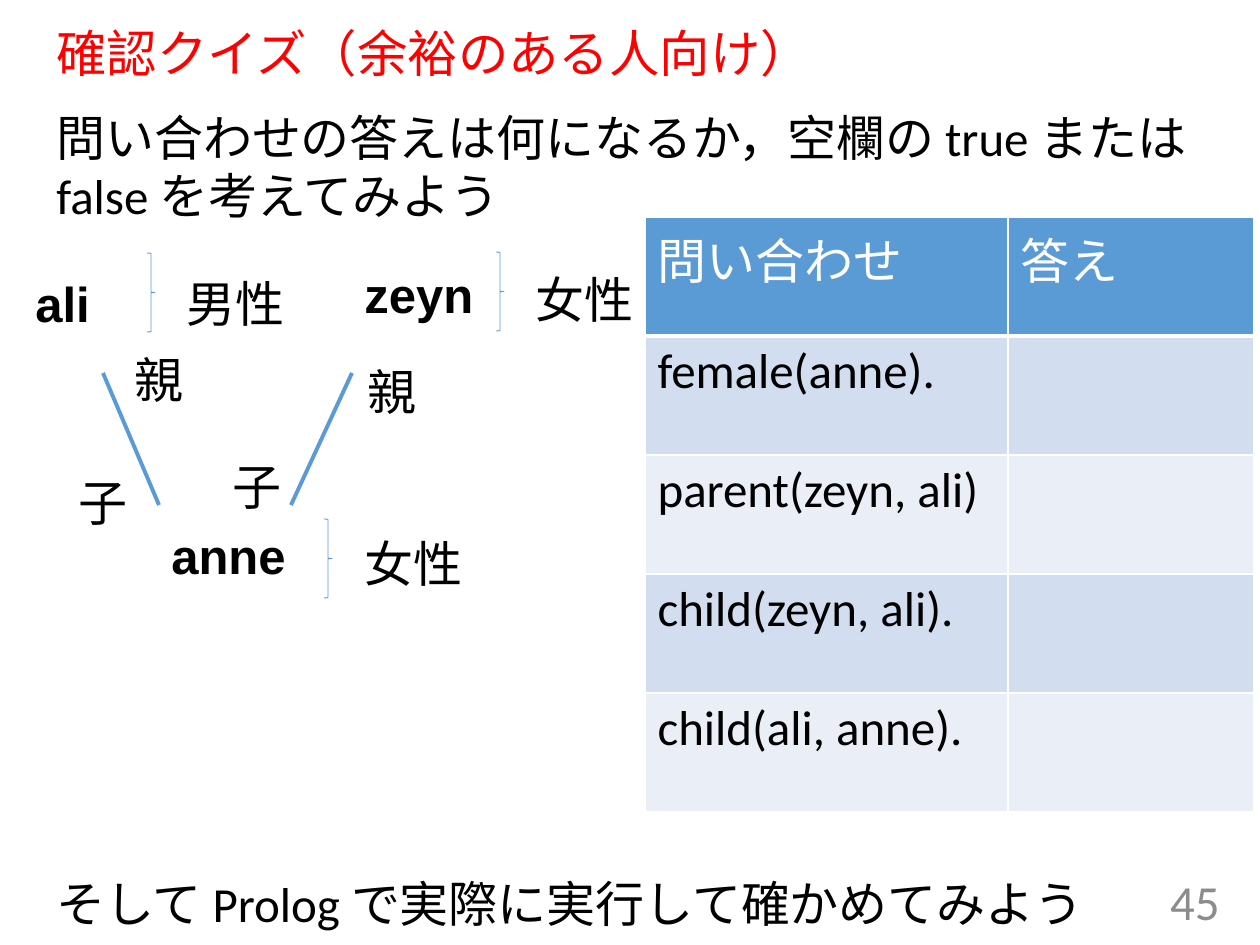
import pptx
import pptx.util
import pptx.dml.color
import pptx.enum.shapes
import pptx.enum.text
import pptx.oxml.ns
from dataclasses import dataclass
from lxml import etree


@dataclass(frozen=True)
class Theme:
    red: str = "FF0000"
    black: str = "000000"
    white: str = "FFFFFF"
    gray: str = "8C8C8C"
    blue: str = "5B9BD5"
    bands: tuple = ("D2DEEF", "EAEFF7")
    title: float = 28.8
    size: float = 28
    head: str = "Lato"
    body: str = "Calibri"
    label: str = "Arial"


theme = Theme()
ALIGN = pptx.enum.text.PP_ALIGN
ANCHOR = pptx.enum.text.MSO_ANCHOR
SHAPE = pptx.enum.shapes.MSO_SHAPE
LINE = pptx.enum.shapes.MSO_CONNECTOR

# Content: boxes are left, top, width, height in px
TITLE = ("確認クイズ（余裕のある人向け）", (44, 24, 1166, 64))
BODY = [
    ("問い合わせの答えは何になるか，空欄の true または false を考えてみよう", (44, 101, 1159, 130)),
    ("そして Prolog で実際に実行して確かめてみよう", (44, 867, 1159, 72)),
]
PAGE = ("45", (949, 876, 283, 50))
NAMES = [
    ("anne", (159, 519, 154, 115)),
    ("ali", (23, 267, 106, 115)),
    ("zeyn", (352, 258, 137, 115)),
]
LABELS = [
    ("男性", (174, 267, 137, 64)),
    ("女性", (523, 263, 141, 60)),
    ("女性", (352, 527, 154, 72)),
    ("親", (355, 355, 141, 60)),
    ("子", (220, 450, 141, 60)),
    ("親", (122, 343, 141, 60)),
    ("子", (66, 466, 141, 60)),
]
BRACES = [(147, 253), (496, 252), (324, 519)]
BRACE = (8, 79)
LINKS = [(103, 373, 159, 505), (352, 373, 291, 505)]
ROWS = [
    ("問い合わせ", "答え"),
    ("female(anne).", ""),
    ("parent(zeyn, ali)", ""),
    ("child(zeyn, ali).", ""),
    ("child(ali, anne).", ""),
]
GRID = (645, 217)
COLS = (363, 246)
ROW = 119


def px(num):
    return pptx.util.Emu(round(num * 914400 / 126))


def rgb(code):
    return pptx.dml.color.RGBColor.from_string(code)


def style(frame, font, color, size=theme.size, bold=False):
    for para in frame.paragraphs:
        for run in para.runs:
            run.font.name = font
            run.font.size = pptx.util.Pt(size)
            run.font.color.rgb = rgb(color)
            run.font.bold = bold


def write(slide, item, font, color=theme.black, **look):
    text, box = item
    frame = slide.shapes.add_textbox(*map(px, box)).text_frame
    frame.word_wrap = True
    frame.text = text
    style(frame, font, color, **look)
    return frame


def border(cell, top, bottom):
    props = cell._tc.get_or_add_tcPr()
    sides = (("lnL", 1), ("lnR", 1), ("lnT", top), ("lnB", bottom))
    for spot, (tag, width) in enumerate(sides):
        edge = etree.Element(pptx.oxml.ns.qn("a:" + tag), w=str(pptx.util.Pt(width)))
        fill = etree.SubElement(edge, pptx.oxml.ns.qn("a:solidFill"))
        etree.SubElement(fill, pptx.oxml.ns.qn("a:srgbClr"), val=theme.white)
        props.insert(spot, edge)


def quiz(slide):
    size = (sum(COLS), ROW * len(ROWS))
    table = slide.shapes.add_table(len(ROWS), len(COLS), *map(px, GRID + size)).table
    for col, width in zip(table.columns, COLS):
        col.width = px(width)
    for r, row in enumerate(ROWS):
        table.rows[r].height = px(ROW)
        for c, text in enumerate(row):
            cell = table.cell(r, c)
            cell.text = text
            style(cell.text_frame, theme.body, theme.black if r else theme.white)
            cell.fill.solid()
            cell.fill.fore_color.rgb = rgb(theme.bands[(r - 1) % 2] if r else theme.blue)
            border(cell, 3 if r == 1 else 1, 1 if r else 3)


def family(slide):
    for item in NAMES:
        write(slide, item, theme.label, bold=True)
    for spot in BRACES:
        brace = slide.shapes.add_shape(SHAPE.RIGHT_BRACE, *map(px, spot + BRACE))
        brace.shadow.inherit = False
        brace.fill.background()
        brace.line.color.rgb = rgb(theme.blue)
        brace.line.width = pptx.util.Pt(0.5)
    for item in LABELS:
        write(slide, item, theme.label)
    for ends in LINKS:
        link = slide.shapes.add_connector(LINE.STRAIGHT, *map(px, ends))
        link.line.color.rgb = rgb(theme.blue)
        link.line.width = pptx.util.Pt(2.25)
        etree.SubElement(link._element.spPr, pptx.oxml.ns.qn("a:effectLst"))


def main():
    deck = pptx.Presentation()
    deck.slide_width, deck.slide_height = px(1260), px(945)
    slide = deck.slides.add_slide(deck.slide_layouts[6])

    # Title and page number
    head = write(slide, TITLE, theme.head, theme.red, size=theme.title)
    head.vertical_anchor = ANCHOR.MIDDLE
    head.paragraphs[0].line_spacing = 0.9
    page = write(slide, PAGE, theme.body, theme.gray)
    page.vertical_anchor = ANCHOR.MIDDLE
    page.paragraphs[0].alignment = ALIGN.RIGHT

    # Quiz table, instructions and family tree
    quiz(slide)
    for item in BODY:
        write(slide, item, theme.body)
    family(slide)

    deck.save("out.pptx")


if __name__ == "__main__":
    main()
